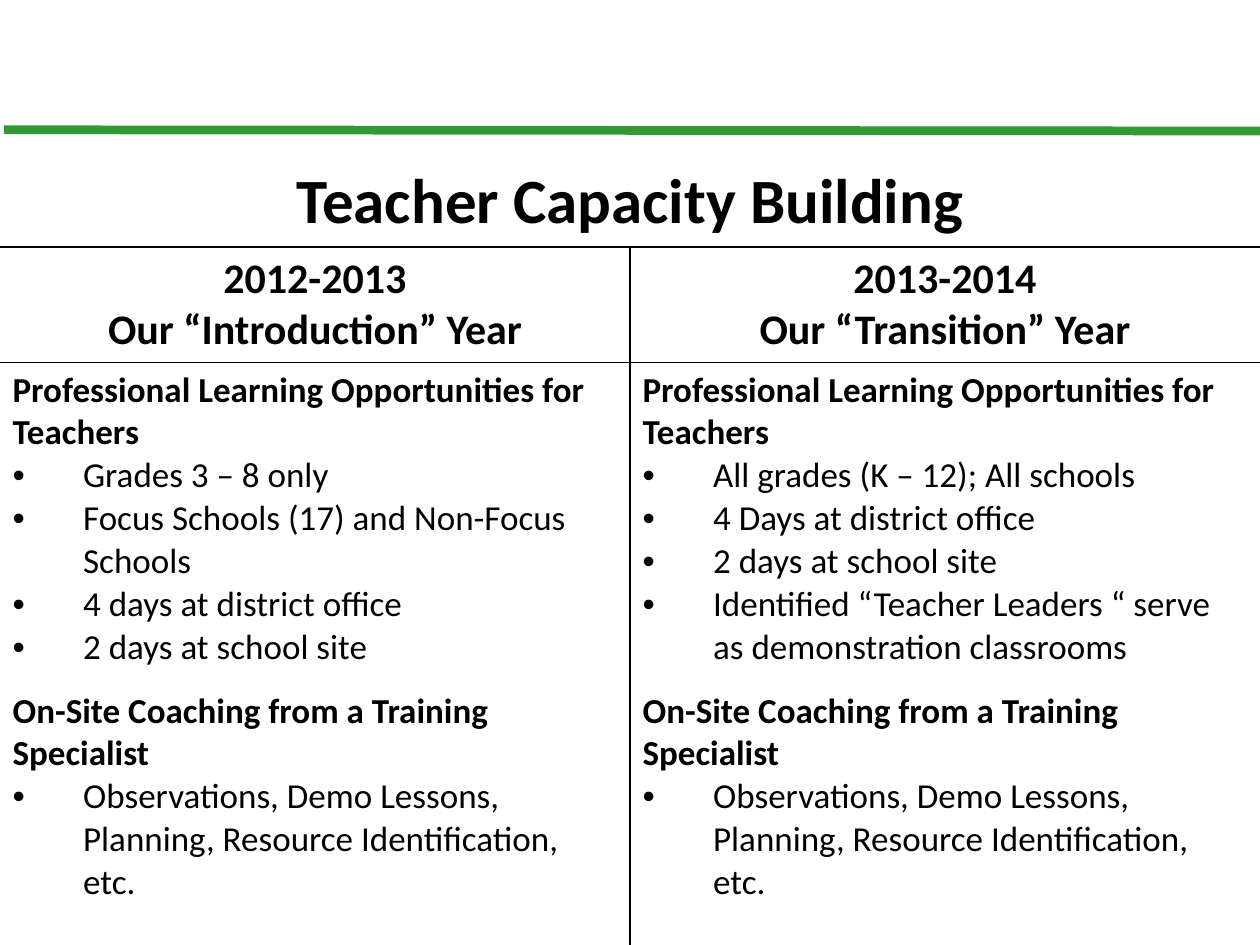
from lxml.etree import SubElement
from pptx import Presentation
from pptx.dml.color import RGBColor
from pptx.enum.shapes import MSO_CONNECTOR as Connector
from pptx.enum.text import PP_ALIGN as Align
from pptx.oxml.ns import qn
from pptx.util import Inches, Pt

WIDTH, HEIGHT = 10, 7.5
BLACK, WHITE, GREEN = "000000", "FFFFFF", "339933"
INDENT = 0.56

LEARNING = "Professional Learning Opportunities for Teachers"
COACHING = "On-Site Coaching from a Training Specialist"
COACHING_ITEMS = ["Observations, Demo Lessons, Planning, Resource Identification, etc."]
YEARS = [
    (["2012-2013", "Our “Introduction” Year"],
     ["Grades 3 – 8 only", "Focus Schools (17) and Non-Focus Schools",
      "4 days at district office", "2 days at school site"]),
    (["2013-2014", "Our “Transition” Year"],
     ["All grades (K – 12); All schools", "4 Days at district office",
      "2 days at school site",
      "Identified “Teacher Leaders “ serve as demonstration classrooms"]),
]


def color(value):
    return RGBColor.from_string(value)


class SlideBuilder:
    font = "Calibri"

    def __init__(self, deck):
        self.slide = deck.slides.add_slide(deck.slide_layouts[6])

    def rule(self, start, end, line_color, weight):
        line = self.slide.shapes.add_connector(
            Connector.STRAIGHT, *(Inches(v) for v in start + end))
        line.line.color.rgb = color(line_color)
        line.line.width = Pt(weight)
        SubElement(line._element.spPr, qn("a:effectLst"))

    def table(self, top, row_heights, columns):
        frame = self.slide.shapes.add_table(
            len(row_heights), columns, 0, Inches(top),
            Inches(WIDTH), Inches(sum(row_heights)))
        table = frame.table
        for row, height in zip(table.rows, row_heights):
            row.height = Inches(height)
        for column in table.columns:
            column.width = Inches(WIDTH / columns)
        return table

    def cell(self, cell, borders):
        """Fill a cell white and draw its left, right, top and bottom borders."""
        properties = cell._tc.get_or_add_tcPr()
        for side, border in zip("LRTB", borders):
            line = SubElement(properties, qn(f"a:ln{side}"), w=str(Pt(1)))
            fill = SubElement(line, qn("a:solidFill"))
            SubElement(fill, qn("a:srgbClr"), val=border)
        cell.fill.solid()
        cell.fill.fore_color.rgb = color(WHITE)

    def text(self, cell, lines, size, align=Align.LEFT):
        """Write lines given as (text, bold, bulleted, space after)."""
        frame = cell.text_frame
        frame.text = "\n".join(line[0] for line in lines)
        for para, (_, bold, bulleted, space) in zip(frame.paragraphs, lines):
            para.alignment = align
            para.space_after = Pt(space)
            if bulleted:
                self.bullet(para)
            for span in para.runs:
                span.font.name = self.font
                span.font.size = Pt(size)
                span.font.bold = bold
                span.font.color.rgb = color(BLACK)

    def bullet(self, para):
        properties = para._p.get_or_add_pPr()
        properties.set("marL", str(Inches(INDENT)))
        properties.set("indent", str(-Inches(INDENT)))
        SubElement(properties, qn("a:buFont"), typeface="Arial")
        SubElement(properties, qn("a:buChar"), char="•")


def section(heading, items):
    """A bold heading with bullets, followed by a gap."""
    last = len(items) - 1
    return [(heading, True, False, 0)] + [
        (item, False, True, 12 if index == last else 0)
        for index, item in enumerate(items)]


def main():
    deck = Presentation()
    deck.slide_width, deck.slide_height = Inches(WIDTH), Inches(HEIGHT)
    builder = SlideBuilder(deck)

    # Green rule across the top
    builder.rule((0.03, 1.03), (WIDTH, 1.04), GREEN, 5)

    # Table frame: title row, year row, detail row
    table = builder.table(1.25, [0.71, 0.91, 4.63], len(YEARS))
    for column in range(len(YEARS)):
        left, right = (WHITE, BLACK) if column == 0 else (BLACK, WHITE)
        builder.cell(table.cell(0, column), (WHITE, WHITE, WHITE, BLACK))
        builder.cell(table.cell(1, column), (left, right, BLACK, BLACK))
        builder.cell(table.cell(2, column), (left, right, BLACK, WHITE))

    # Title across both columns
    title = table.cell(0, 0)
    title.merge(table.cell(0, len(YEARS) - 1))
    builder.text(title, [("Teacher Capacity Building", True, False, 0)], 36, Align.CENTER)

    # One column for each school year
    for column, (heading, learning_items) in enumerate(YEARS):
        builder.text(table.cell(1, column),
                     [(line, True, False, 0) for line in heading], 24, Align.CENTER)
        builder.text(table.cell(2, column),
                     section(LEARNING, learning_items) + section(COACHING, COACHING_ITEMS), 20)

    deck.save("out.pptx")


if __name__ == "__main__":
    main()
